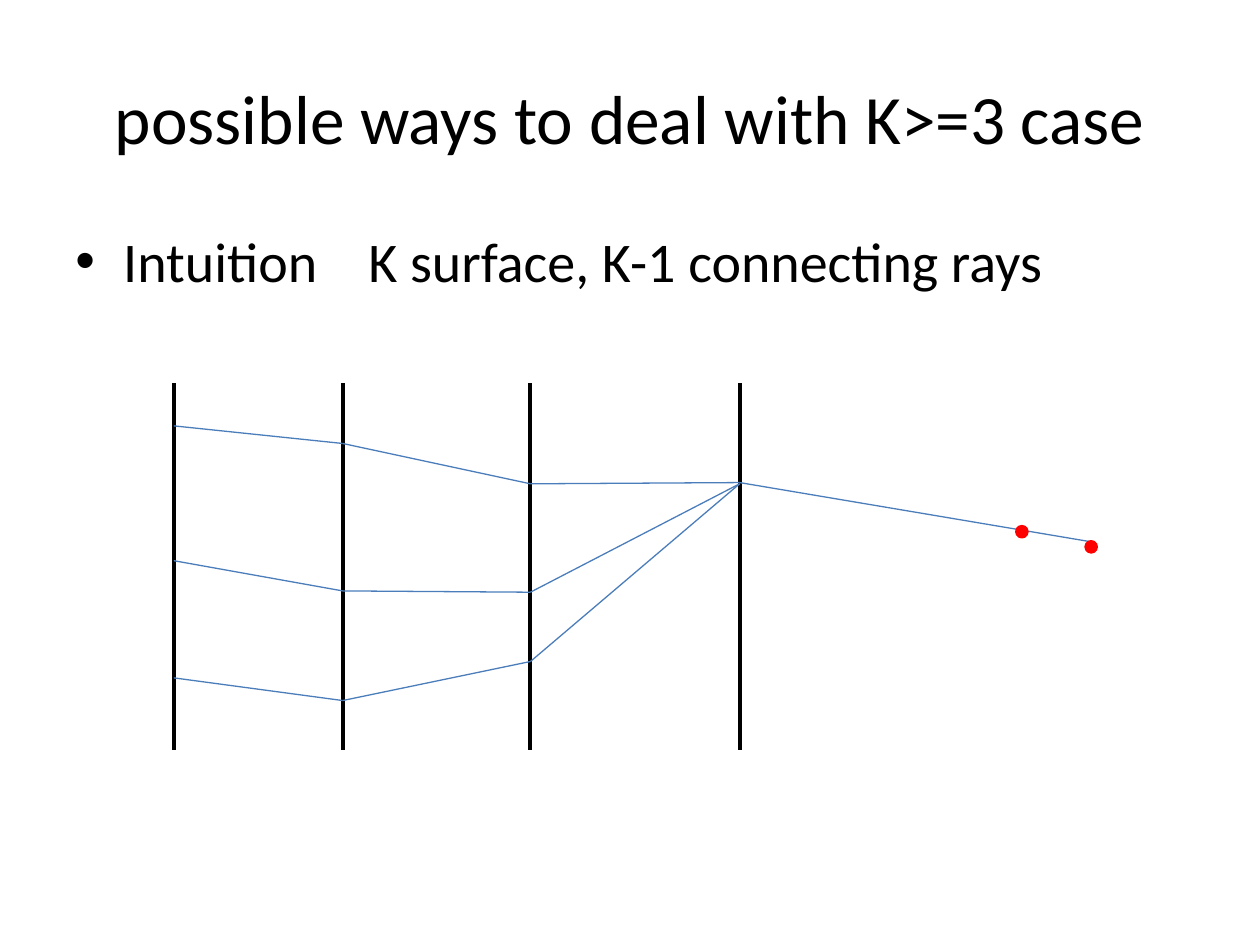
import pptx
import pptx.util
import pptx.dml.color
import pptx.enum.shapes
import pptx.enum.text
import lxml.etree

Inches, Pt = pptx.util.Inches, pptx.util.Pt
RGBColor = pptx.dml.color.RGBColor
Align = pptx.enum.text.PP_ALIGN
Anchor = pptx.enum.text.MSO_ANCHOR

BLACK = RGBColor(0, 0, 0)
RED = RGBColor(0xFF, 0, 0)
BLUE = RGBColor(0x4A, 0x7D, 0xBA)

TITLE = "possible ways to deal with K>=3 case"
BULLET = ("Intuition", " ", "K surface, K-1 connecting rays")
GAP = 21.7  # points added to the space after the first word

WALLS = (1.38, 2.72, 4.21, 5.87)
TOP, BOTTOM = 3.04, 5.95
END = 8.66
# heights at which each ray meets the walls, left to right
RAYS = (
    (3.38, 3.52, 3.84, 3.83, 4.3),
    (4.45, 4.69, 4.7, 3.84),
    (5.38, 5.56, 5.25, 3.84),
)
DOTS = ((8.62, 4.3), (8.07, 4.18))
SIZE = 0.08

deck = pptx.Presentation()
deck.slide_width, deck.slide_height = Inches(10), Inches(7.5)
slide = deck.slides.add_slide(deck.slide_layouts[6])
shapes = slide.shapes


def add_text(box, parts, size, anchor, align):
    frame = shapes.add_textbox(*map(Inches, box)).text_frame
    form = {"word_wrap": True, "vertical_anchor": anchor}
    for key, value in form.items():
        setattr(frame, key, value)
    para = frame.paragraphs[0]
    para.alignment = align
    font = {"name": "Calibri", "size": Pt(size)}
    for part in parts:
        run = para.add_run()
        run.text = part
        run.font.color.rgb = BLACK
        for key, value in font.items():
            setattr(run.font, key, value)
    return para


def add_line(start, end, color, width):
    ends = map(Inches, (*start, *end))
    line = shapes.add_connector(pptx.enum.shapes.MSO_CONNECTOR.STRAIGHT, *ends)
    line.line.color.rgb = color
    line.line.width = Pt(width)
    props = line._element.spPr
    lxml.etree.SubElement(props, pptx.oxml.ns.qn("a:effectLst"))


add_text((0.5, 0.3, 9, 1.25), [TITLE], 39.6, Anchor.MIDDLE, Align.CENTER)

para = add_text((0.5, 1.75, 9, 4.95), BULLET, 32, Anchor.TOP, Align.LEFT)
para.runs[1].font._element.set("spc", str(round(GAP * 100)))
props = para._p.get_or_add_pPr()
props.set("marL", str(Inches(0.38)))
props.set("indent", str(Inches(-0.38)))
for tag, key, value in (("a:buFont", "typeface", "Arial"), ("a:buChar", "char", "•")):
    lxml.etree.SubElement(props, pptx.oxml.ns.qn(tag)).set(key, value)

for x in WALLS:
    add_line((x, TOP), (x, BOTTOM), BLACK, 2.25)

for ray in RAYS:
    spots = list(zip((*WALLS, END), ray))
    for start, end in zip(spots, spots[1:]):
        add_line(start, end, BLUE, 0.75)

for x, y in DOTS:
    dot = shapes.add_shape(
        pptx.enum.shapes.MSO_SHAPE.FLOWCHART_CONNECTOR,
        *map(Inches, (x, y, SIZE, SIZE)),
    )
    dot.shadow.inherit = False
    dot.fill.solid()
    dot.fill.fore_color.rgb = RED
    dot.line.color.rgb = RED
    dot.line.width = Pt(2)

deck.save("out.pptx")
